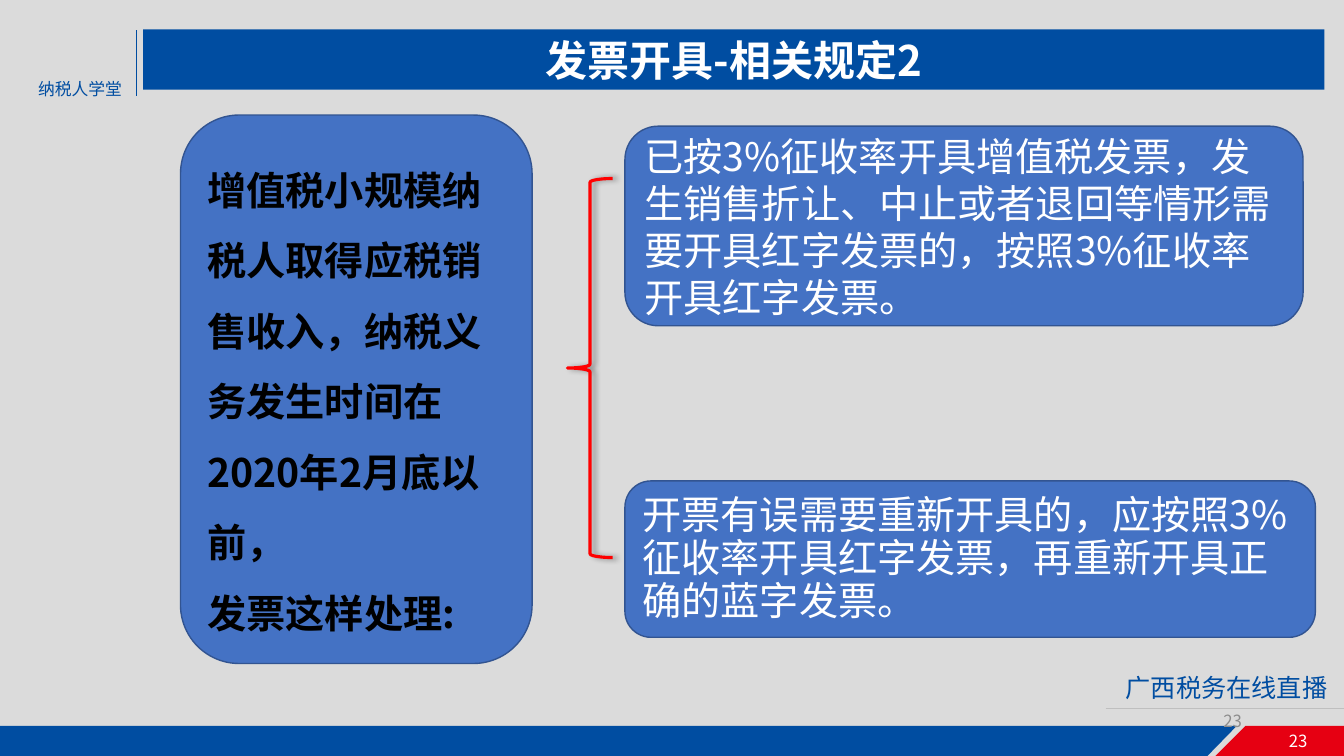
from dataclasses import dataclass
from typing import Optional

from lxml.etree import SubElement as Sub
from pptx import Presentation
from pptx.dml.color import RGBColor as Rgb
from pptx.enum.shapes import MSO_CONNECTOR as Link, MSO_SHAPE as Kind
from pptx.enum.text import MSO_ANCHOR as Anchor, PP_ALIGN as Align
from pptx.oxml.ns import qn
from pptx.util import Cm, Pt

FONT = "Noto Sans CJK SC"
COLORS = {
    "back": "DBDBDB", "navy": "004DA1", "red": "E60012", "rule": "BFBFBF",
    "box": "4472C4", "edge": "325491", "brace": "FF0000",
    "white": "FFFFFF", "black": "000000", "gray": "8C8C8C",
}


def rgb(name: str) -> Rgb:
    return Rgb.from_string(COLORS[name])


@dataclass
class Block:
    """Text in a preset shape, or in a plain text box if kind is None."""
    place: tuple[float, float, float, float]
    lines: list[str]
    size: int
    color: str
    kind: Optional[Kind] = None
    fill: str = "box"
    edge: Optional[str] = "edge"
    bold: bool = False
    align: Align = Align.LEFT
    anchor: Anchor = Anchor.TOP
    lead: float = 1.2


@dataclass
class Band:
    points: list[tuple[float, float]]
    fill: str


@dataclass
class Rule:
    start: tuple[float, float]
    end: tuple[float, float]
    color: str


def draw_band(shapes, band: Band) -> None:
    first, *rest = [(Cm(x), Cm(y)) for x, y in band.points]
    path = shapes.build_freeform(*first)
    path.add_line_segments(rest, close=True)
    shape = path.convert_to_shape()
    shape.shadow.inherit = False
    shape.fill.solid()
    shape.fill.fore_color.rgb = rgb(band.fill)
    shape.line.fill.background()


def draw_rule(shapes, rule: Rule) -> None:
    ends = [Cm(v) for v in rule.start + rule.end]
    line = shapes.add_connector(Link.STRAIGHT, *ends)
    line.line.color.rgb = rgb(rule.color)
    line.line.width = Pt(0.5)
    Sub(line._element.spPr, qn("a:effectLst"))


def draw_block(shapes, block: Block) -> None:
    place = [Cm(v) for v in block.place]
    if block.kind is None:
        shape = shapes.add_textbox(*place)
    else:
        shape = shapes.add_shape(block.kind, *place)
        shape.shadow.inherit = False
        shape.fill.solid()
        shape.fill.fore_color.rgb = rgb(block.fill)
        if block.edge:
            shape.line.color.rgb = rgb(block.edge)
            shape.line.width = Pt(1)
        else:
            shape.line.fill.background()
    frame = shape.text_frame
    frame.word_wrap = True
    frame.vertical_anchor = block.anchor
    style = {"name": FONT, "size": Pt(block.size), "bold": block.bold}
    for i, text in enumerate(block.lines):
        para = frame.add_paragraph() if i else frame.paragraphs[0]
        para.alignment = block.align
        para.line_spacing = Pt(block.size * block.lead)
        run = para.add_run()
        run.text = text
        run.font.color.rgb = rgb(block.color)
        for key, value in style.items():
            setattr(run.font, key, value)
        Sub(run._r.get_or_add_rPr(), qn("a:ea"), typeface=FONT)


def draw_brace(shapes) -> None:
    brace = shapes.add_shape(Kind.LEFT_BRACE, Cm(14.3), Cm(4.5), Cm(1.14), Cm(9.55))
    brace.fill.background()
    brace.line.color.rgb = rgb("brace")
    brace.line.width = Pt(2.25)
    # Soft shadow to the right
    glow = Sub(brace._element.spPr, qn("a:effectLst"))
    cast = Sub(glow, qn("a:outerShdw"), blurRad=str(Pt(4)), dist=str(Pt(3)),
               dir="0", rotWithShape="0")
    tint = Sub(cast, qn("a:srgbClr"), val=COLORS["black"])
    Sub(tint, qn("a:alpha"), val="40000")


BANDS = [
    Band([(0, 18.29), (31.17, 18.29), (30.38, 19.1), (0, 19.1)], "navy"),
    Band([(31.39, 18.29), (33.87, 18.29), (33.87, 19.1), (30.58, 19.1)], "red"),
]
RULES = [
    Rule((3.43, 0.76), (3.43, 2.41), "navy"),
    Rule((27.86, 17.86), (33.87, 17.86), "rule"),
]
LABELS = [
    Block((32.23, 18.29, 1.37, 1.02), ["23"], 12, "white"),
    Block((0.71, 1.85, 2.74, 0.76), ["纳税人学堂"], 12, "navy"),
    Block((28.12, 16.81, 5.75, 1.02), ["广西税务在线直播"], 18, "navy"),
]
BOXES = [
    Block((4.55, 2.9, 8.86, 13.82),
          ["增值税小规模纳税人取得应税销售收入，纳税义务发生时间在2020年2月底以前，",
           "发票这样处理:"],
          28, "black", Kind.ROUNDED_RECTANGLE, bold=True,
          anchor=Anchor.MIDDLE, lead=1.8),
    Block((15.75, 3.18, 17.09, 5.03),
          ["已按3%征收率开具增值税发票，发生销售折让、中止或者退回等情形"
           "需要开具红字发票的，按照3%征收率开具红字发票。"],
          28, "white", Kind.FLOWCHART_ALTERNATE_PROCESS, anchor=Anchor.MIDDLE),
    Block((15.75, 12.12, 17.4, 3.94),
          ["开票有误需要重新开具的，应按照3%征收率开具红字发票，"
           "再重新开具正确的蓝字发票。"],
          28, "white", Kind.FLOWCHART_ALTERNATE_PROCESS,
          anchor=Anchor.MIDDLE, lead=1.093),
]
HEADS = [
    Block((23.93, 17.65, 7.62, 1.02), ["23"], 12, "gray",
          align=Align.RIGHT, anchor=Anchor.MIDDLE),
    Block((3.61, 0.74, 29.77, 1.52), ["发票开具-相关规定2"], 30, "white",
          Kind.RECTANGLE, fill="navy", edge=None, bold=True, align=Align.CENTER),
]


def main() -> None:
    deck = Presentation()
    deck.slide_width, deck.slide_height = Cm(33.87), Cm(19.05)
    slide = deck.slides.add_slide(deck.slide_layouts[6])
    slide.background.fill.solid()
    slide.background.fill.fore_color.rgb = rgb("back")
    shapes = slide.shapes

    # Footer bands, rules and labels
    for band in BANDS:
        draw_band(shapes, band)
    for rule in RULES:
        draw_rule(shapes, rule)
    for label in LABELS:
        draw_block(shapes, label)

    # Case on the left, its two answers on the right
    for box in BOXES:
        draw_block(shapes, box)
    draw_brace(shapes)

    # Page number and title
    for head in HEADS:
        draw_block(shapes, head)

    deck.save("out.pptx")


if __name__ == "__main__":
    main()
